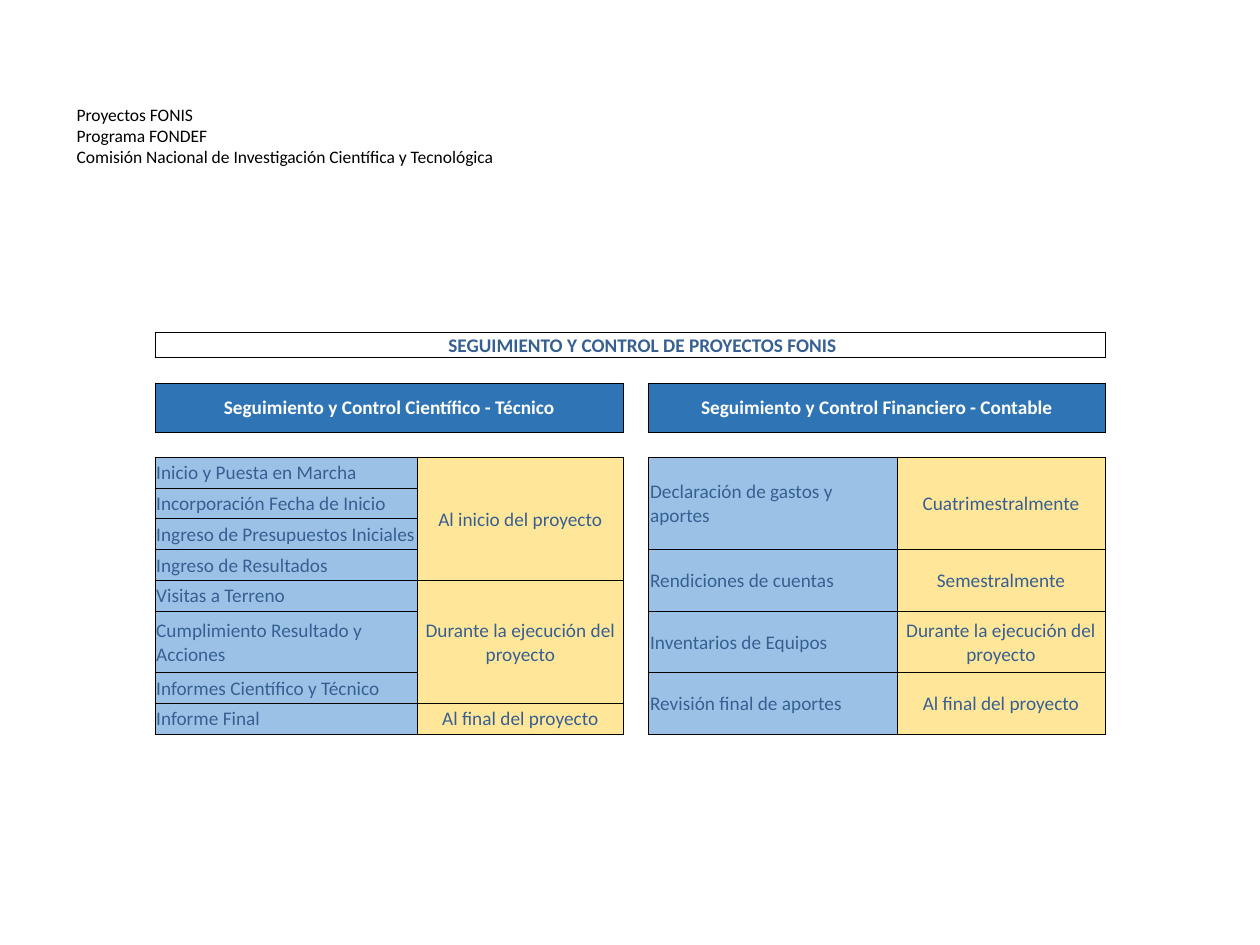
from dataclasses import dataclass

from lxml import etree
from pptx import Presentation
from pptx.dml.color import RGBColor
from pptx.enum import text
from pptx.oxml import ns
from pptx.util import Inches, Pt

HUES = {"ink": "000000", "navy": "376092", "white": "FFFFFF",
        "head": "2F75B5", "task": "9BC2E6", "time": "FFE699"}
NO_STYLE = "{2D5ABB26-0587-4C30-8999-92F81FD0307C}"
COLS = [0.73, 2.08, 1.64, 0.2, 1.97, 1.65, 0.73]
ROWS = [0.18, 0.2, 0.2, 0.39, 0.2] + [2.2 / 9] * 9 + [0.18]


@dataclass
class Box:
    row: int
    col: int
    label: str
    fill: str
    rows: int = 1
    cols: int = 1
    ink: str = "navy"
    bold: bool = False
    indent: float = 0.01


def stack(col: int, fill: str, items: list[tuple[str, int]]) -> list[Box]:
    boxes, row = [], 5
    for label, span in items:
        boxes.append(Box(row, col, label, fill, rows=span))
        row += span
    return boxes


START, DURING, END = ("Al inicio del proyecto", "Durante la ejecución del proyecto",
                      "Al final del proyecto")
BOXES = [
    Box(1, 1, "SEGUIMIENTO Y CONTROL DE PROYECTOS FONIS", "white",
        cols=5, bold=True, indent=0.21),
    Box(3, 1, "Seguimiento y Control Científico - Técnico", "head",
        cols=2, ink="white", bold=True),
    Box(3, 4, "Seguimiento y Control Financiero - Contable", "head",
        cols=2, ink="white", bold=True),
    *stack(1, "task", [
        ("Inicio y Puesta en Marcha", 1), ("Incorporación Fecha de Inicio", 1),
        ("Ingreso de Presupuestos Iniciales", 1), ("Ingreso de Resultados", 1),
        ("Visitas a Terreno", 1), ("Cumplimiento Resultado y Acciones", 2),
        ("Informes Científico y Técnico", 1), ("Informe Final", 1)]),
    *stack(2, "time", [(START, 4), (DURING, 4), (END, 1)]),
    *stack(4, "task", [
        ("Declaración de gastos y aportes", 3), ("Rendiciones de cuentas", 2),
        ("Inventarios de Equipos", 2), ("Revisión final de aportes", 2)]),
    *stack(5, "time", [("Cuatrimestralmente", 3), ("Semestralmente", 2),
                       (DURING, 2), (END, 2)]),
]


def tint(name: str) -> RGBColor:
    return RGBColor.from_string(HUES[name])


def style(para, size: float, ink: str, bold: bool = False) -> None:
    font = para.font
    font.name, font.size, font.bold = "Calibri", Pt(size), bold
    font.color.rgb = tint(ink)


def edge(cell) -> None:
    props = cell._tc.get_or_add_tcPr()
    for side in "LRTB":
        line = etree.SubElement(props, ns.qn(f"a:ln{side}"), w=str(Pt(0.5)))
        fill = etree.SubElement(line, ns.qn("a:solidFill"))
        etree.SubElement(fill, ns.qn("a:srgbClr"), val=HUES["ink"])


def clear(cell) -> None:
    cell.margin_left = cell.margin_right = Inches(0.01)
    cell.margin_top, cell.margin_bottom = Inches(0.01), 0
    para = cell.text_frame.paragraphs[0]
    etree.SubElement(para._p, ns.qn("a:endParaRPr"), sz="800")


def draw(table, box: Box) -> None:
    last = table.cell(box.row + box.rows - 1, box.col + box.cols - 1)
    cell = table.cell(box.row, box.col)
    if box.rows * box.cols > 1:
        cell.merge(last)
    for row in range(box.row, box.row + box.rows):
        for col in range(box.col, box.col + box.cols):
            part = table.cell(row, col)
            edge(part)
            part.fill.solid()
            part.fill.fore_color.rgb = tint(box.fill)
    cell.margin_left = Inches(box.indent)
    cell.vertical_anchor = text.MSO_ANCHOR.MIDDLE
    para = cell.text_frame.paragraphs[0]
    para.text = box.label
    left = box.fill == "task"
    para.alignment = text.PP_ALIGN.LEFT if left else text.PP_ALIGN.CENTER
    style(para, 11, box.ink, box.bold)


def grid(slide) -> None:
    frame = slide.shapes.add_table(len(ROWS), len(COLS), Inches(0.5), Inches(2.46),
                                   Inches(sum(COLS)), Inches(sum(ROWS)))
    table = frame.table
    table.first_row = table.horz_banding = False
    table._tbl.tblPr.find(ns.qn("a:tableStyleId")).text = NO_STYLE
    for col, width in zip(table.columns, COLS):
        col.width = Inches(width)
    for row, height in zip(table.rows, ROWS):
        row.height = Inches(height)
    for cell in table.iter_cells():
        clear(cell)
    for box in BOXES:
        draw(table, box)


def header(slide) -> None:
    frame = slide.shapes.add_textbox(Inches(0.51), Inches(0.52),
                                     Inches(7.81), Inches(1.11)).text_frame
    frame.word_wrap = True
    frame.vertical_anchor = text.MSO_ANCHOR.MIDDLE
    para = frame.paragraphs[0]
    para.text = ("Proyectos FONIS\nPrograma FONDEF\n"
                 "Comisión Nacional de Investigación Científica y Tecnológica")
    style(para, 10, "ink")


def main() -> None:
    deck = Presentation()
    deck.slide_width, deck.slide_height = Inches(10), Inches(7.5)
    slide = deck.slides.add_slide(deck.slide_layouts[6])
    header(slide)
    grid(slide)
    deck.save("out.pptx")


if __name__ == "__main__":
    main()
